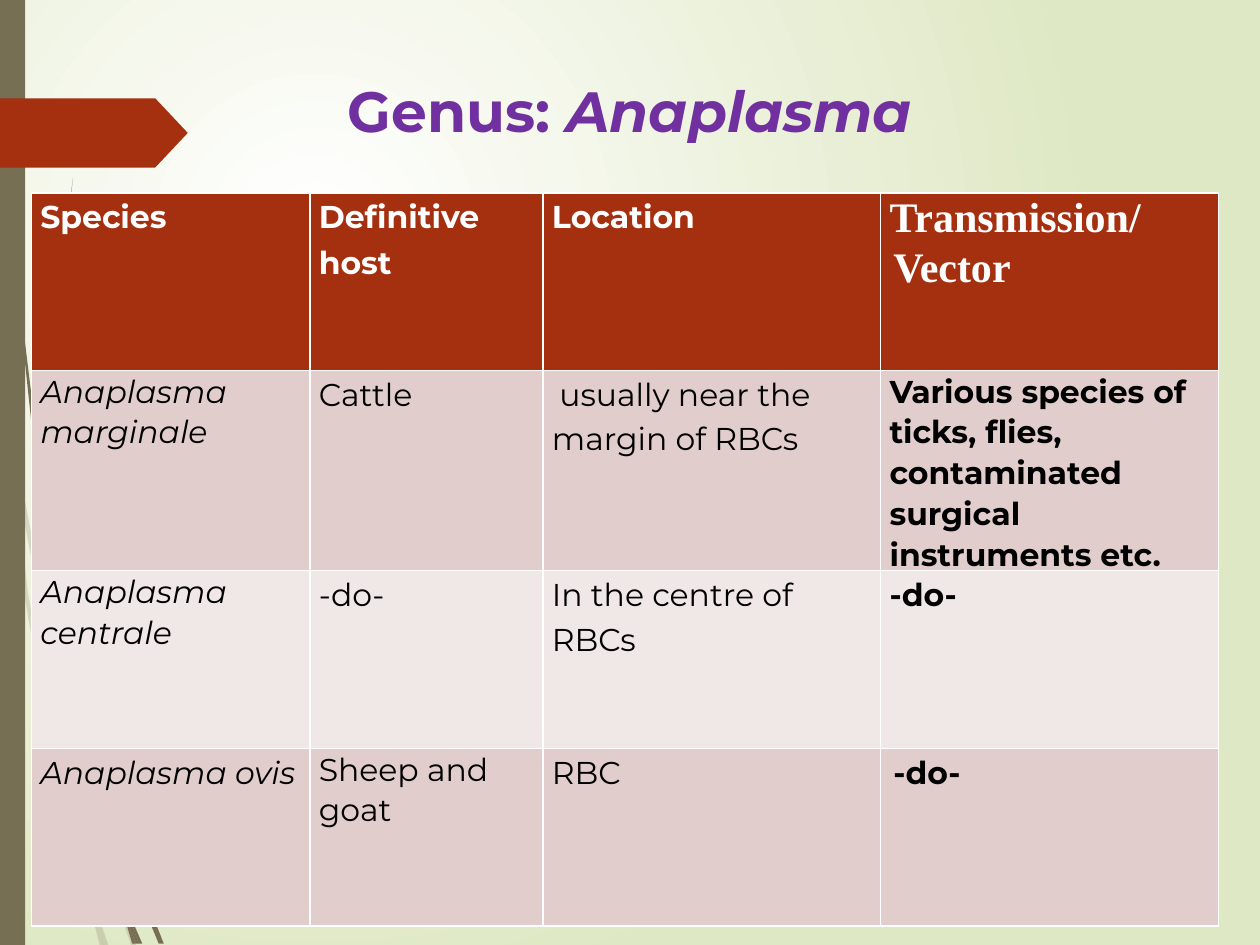
from lxml import etree
from pptx import Presentation
from pptx import util as u
from pptx.dml.color import RGBColor
from pptx.enum import shapes, text
from pptx.oxml.ns import qn

THEME = {
    "olive": "766F54", "rust": "A53010", "purple": "7030A0",
    "white": "FFFFFF", "black": "000000", "glow": "DFE8C4",
    "bands": ["E1CDCC", "F0E8E7"],
    "font": "Montserrat", "serif": "Times New Roman",
    "title_size": 32.4, "body_size": 18, "serif_size": 24,
}

TITLE = [("Genus: ", False), ("Anaplasma", True)]

# Each cell: paragraphs, then what differs from a plain cell
TIGHT = {"spacing": 1.06}
HEADER = [
    (["Species"], {}),
    (["Definitive", "host"], {}),
    (["Location"], {}),
    (["Transmission/ Vector"],
     {"spacing": 1.06, "left": 0.1, "first": -0.03,
      "font": THEME["serif"], "size": THEME["serif_size"]}),
]
BODY = [
    [(["Anaplasma marginale"], TIGHT), (["Cattle"], {}),
     (["usually near the margin of RBCs"], {"first": 0.06}),
     (["Various species of ticks, flies, contaminated surgical instruments etc."], TIGHT)],
    [(["Anaplasma centrale"], TIGHT), (["-do-"], {}),
     (["In the centre of RBCs"], {}), (["-do-"], {})],
    [(["Anaplasma ovis"], {}), (["Sheep and goat"], TIGHT),
     (["RBC"], {}), (["-do-"], {"left": 0.1})],
]
TABLE_LEFT, TABLE_TOP, ROW_HEIGHT = 0.25, 1.53, 1.41
COLUMN_WIDTHS = [2.21, 1.85, 2.68, 2.68]

# Grass blades behind the table, as outlines in inches
FAINT_BLADES = [
    [(0.4, 5.22), (0.59, 5.99), (0.59, 5.86), (0.43, 5.2), (0.1, 3.45), (0.12, 3.76)],
    [(0.64, 6.07), (0.61, 5.96), (0.61, 6.1), (0.85, 6.94), (1.04, 7.5), (1.08, 7.5),
     (0.88, 6.92)],
    [(0.83, 7.5), (0.86, 7.5), (0.73, 7.11)],
    [(0.64, 6.83), (0.48, 6.19), (0.22, 4.69), (0.12, 3.76), (0.08, 3.5), (0.19, 4.7),
     (0.45, 6.21), (0.64, 6.93), (0.7, 7.14), (0.69, 7.07)],
    [(0.7, 7.14), (0.79, 7.5), (0.82, 7.5)],
    [(0.67, 6.92), (0.65, 6.83), (0.69, 7.07), (0.7, 7.14), (0.82, 7.5), (0.83, 7.5),
     (0.73, 7.11)],
]
SOLID_BLADES = [
    [(0.05, 1.1), (0.14, 2.33), (0.27, 3.55), (0.46, 4.77), (0.47, 4.81), (0.45, 4.53),
     (0.3, 3.55), (0.15, 2.32), (0.06, 1.09), (0.04, 0.48), (0.03, 0), (0.02, 0),
     (0.03, 0.48)],
    [(0.94, 6.49), (0.91, 6.41), (0.91, 6.56), (1.09, 7.08), (1.26, 7.49), (1.3, 7.49),
     (1.13, 7.06)],
    [(0.5, 4.72), (0.48, 4.53), (0.44, 3.49), (0.48, 2.45), (0.52, 1.93), (0.58, 1.41),
     (0.51, 1.93), (0.47, 2.45), (0.43, 3.49), (0.45, 4.49), (0.49, 4.72)],
    [(1.1, 7.49), (1.13, 7.49), (1, 7.19)],
    [(0.97, 7.22), (1.05, 7.49), (1.08, 7.49)],
    [(0.96, 7.06), (0.91, 6.91), (0.96, 7.17), (0.97, 7.22), (1.08, 7.49), (1.1, 7.49),
     (1, 7.19)],
]


def rgb(name):
    return RGBColor.from_string(THEME.get(name, name))


def style_run(run, color, size, font=THEME["font"], bold=False, italic=False):
    run.font.name, run.font.size = font, u.Pt(size)
    run.font.bold, run.font.italic = bold, italic
    run.font.color.rgb = rgb(color)


def paint(shape, color):
    shape.shadow.inherit = False
    shape.fill.solid()
    shape.fill.fore_color.rgb = rgb(color)
    shape.line.fill.background()


def paint_background(slide):
    """White glow near the upper left, fading to pale green."""
    fill = slide.background.fill
    fill.gradient()
    for stop, color in zip(fill.gradient_stops, ("white", "glow")):
        stop.color.rgb = rgb(color)
    gradient = slide.element.find(".//" + qn("a:gradFill"))
    for linear in gradient.findall(qn("a:lin")):
        gradient.remove(linear)
    circle = etree.SubElement(gradient, qn("a:path"), {"path": "circle"})
    etree.SubElement(circle, qn("a:fillToRect"),
                     {"l": "50000", "t": "50000", "r": "100000", "b": "100000"})


def add_blade(slide, points, opacity=100):
    start, *rest = [(u.Inches(x), u.Inches(y)) for x, y in points]
    builder = slide.shapes.build_freeform(*start)
    builder.add_line_segments(rest, close=True)
    blade = builder.convert_to_shape()
    paint(blade, "olive")
    if opacity < 100:
        color = blade.element.spPr.find(".//" + qn("a:srgbClr"))
        etree.SubElement(color, qn("a:alpha"), {"val": str(opacity * 1000)})


def add_block(slide, kind, left, top, width, height, color):
    block = slide.shapes.add_shape(kind, *map(u.Inches, (left, top, width, height)))
    paint(block, color)
    return block


def add_title(slide):
    box = slide.shapes.add_textbox(0, 0, u.Inches(10), u.Inches(1.75))
    frame = box.text_frame
    frame.word_wrap = True
    frame.vertical_anchor = text.MSO_ANCHOR.MIDDLE
    paragraph = frame.paragraphs[0]
    paragraph.alignment = text.PP_ALIGN.CENTER
    for words, italic in TITLE:
        run = paragraph.add_run()
        run.text = words
        style_run(run, "purple", THEME["title_size"], bold=True, italic=italic)


def add_borders(cell):
    properties = cell._tc.get_or_add_tcPr()
    for side in "LRTB":
        line = etree.SubElement(properties, qn("a:ln" + side), {"w": str(u.Pt(1))})
        solid = etree.SubElement(line, qn("a:solidFill"))
        etree.SubElement(solid, qn("a:srgbClr"), {"val": THEME["white"]})


def fill_cell(cell, paragraphs, options, fill, color, bold, italic, before):
    add_borders(cell)
    cell.fill.solid()
    cell.fill.fore_color.rgb = rgb(fill)
    cell.margin_left = cell.margin_right = cell.margin_top = cell.margin_bottom = 0
    cell.text_frame.text = "\n".join(paragraphs)
    for index, paragraph in enumerate(cell.text_frame.paragraphs):
        properties = paragraph._p.get_or_add_pPr()
        properties.set("marL", str(u.Inches(options.get("left", 0.07))))
        properties.set("indent", str(u.Inches(options.get("first", 0))))
        paragraph.line_spacing = options.get("spacing", 1.15)
        paragraph.space_before = u.Pt(0.7 if index else before)
        style_run(paragraph.runs[0], color, options.get("size", THEME["body_size"]),
                  options.get("font", THEME["font"]), bold, italic)


def add_species_table(slide):
    rows = [HEADER] + BODY
    frame = slide.shapes.add_table(
        len(rows), len(COLUMN_WIDTHS), u.Inches(TABLE_LEFT), u.Inches(TABLE_TOP),
        u.Inches(sum(COLUMN_WIDTHS)), u.Inches(ROW_HEIGHT * len(rows)))
    table = frame.table
    table.horz_banding = False
    for column, width in zip(table.columns, COLUMN_WIDTHS):
        column.width = u.Inches(width)
    for r, row in enumerate(rows):
        table.rows[r].height = u.Inches(ROW_HEIGHT)
        for c, (paragraphs, options) in enumerate(row):
            cell = table.cell(r, c)
            if r == 0:
                fill_cell(cell, paragraphs, options, "rust", "white", True, False, 1.4)
            else:
                fill_cell(cell, paragraphs, options, THEME["bands"][(r - 1) % 2], "black",
                          c == len(row) - 1, c == 0, 1.6)


def main():
    presentation = Presentation()
    presentation.slide_width, presentation.slide_height = u.Inches(10), u.Inches(7.5)
    slide = presentation.slides.add_slide(presentation.slide_layouts[6])
    paint_background(slide)
    for points in FAINT_BLADES:
        add_blade(slide, points, opacity=20)
    for points in SOLID_BLADES:
        add_blade(slide, points)
    add_block(slide, shapes.MSO_SHAPE.RECTANGLE, 0, 0, 0.2, 7.5, "olive")
    tag = add_block(slide, shapes.MSO_SHAPE.PENTAGON, 0, 0.78, 1.49, 0.55, "rust")
    tag.adjustments[0] = 0.47
    add_title(slide)
    add_species_table(slide)
    presentation.save("out.pptx")


if __name__ == "__main__":
    main()
